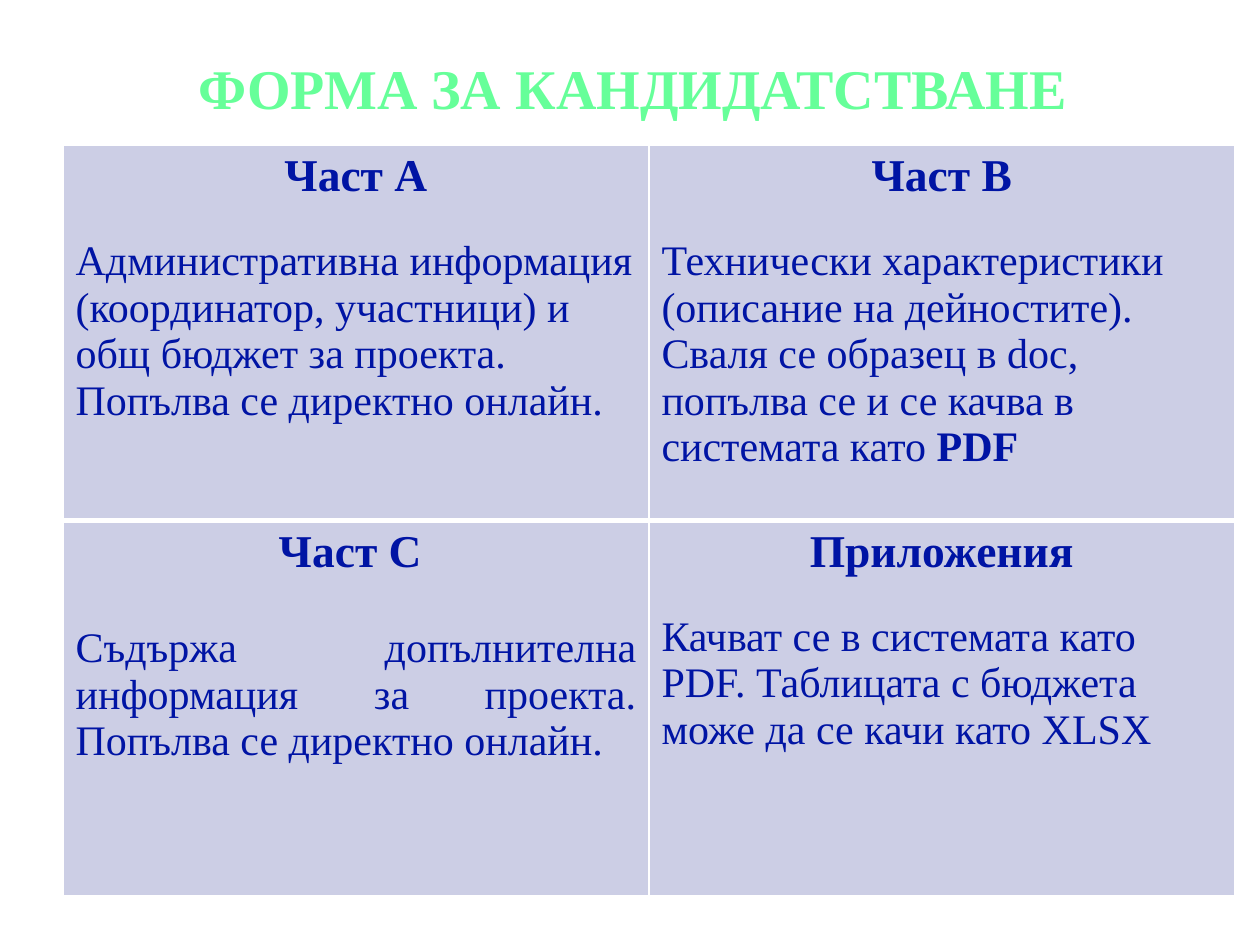
from dataclasses import dataclass

from lxml import etree
from pptx import Presentation
from pptx.dml.color import RGBColor
from pptx.enum.text import MSO_ANCHOR, PP_ALIGN
from pptx.oxml.ns import qn
from pptx.util import Inches, Pt

CENTER, LEFT, JUSTIFY = PP_ALIGN.CENTER, PP_ALIGN.LEFT, PP_ALIGN.JUSTIFY
MIDDLE = MSO_ANCHOR.MIDDLE
TITLE_ONLY = 5


@dataclass(frozen=True)
class Theme:
    font: str = "Times New Roman"
    title_color: str = "66FF99"
    text_color: str = "0014A4"
    cell_color: str = "CCCEE5"
    border_color: str = "FFFFFF"
    title_size: float = 32
    heading_size: float = 26
    body_size: float = 24
    thin: float = 1
    thick: float = 3


@dataclass(frozen=True)
class FormPart:
    heading: str
    body: str
    emphasis: str = ""
    alignment: PP_ALIGN = LEFT
    gap: float = 21


THEME = Theme()
FORM_PARTS = [
    [
        FormPart(
            "Част А",
            "Административна информация (координатор, участници) и общ бюджет "
            "за проекта. Попълва се директно онлайн.",
        ),
        FormPart(
            "Част В",
            "Технически характеристики (описание на дейностите). Сваля се образец "
            "в doc, попълва се и се качва в системата като ",
            emphasis="PDF",
        ),
    ],
    [
        FormPart(
            "Част C ",
            "Съдържа допълнителна информация за проекта. "
            "Попълва се директно онлайн. ",
            alignment=JUSTIFY,
            gap=27.6,
        ),
        FormPart(
            "Приложения",
            "Качват се в системата като PDF. Таблицата с бюджета може да се "
            "качи като XLSX",
        ),
    ],
]


def add_text(paragraph, text: str, *, size: float, color: str, bold: bool = False) -> None:
    run = paragraph.add_run()
    run.text = text
    run.font.name = THEME.font
    run.font.size = Pt(size)
    run.font.bold = bold
    run.font.color.rgb = RGBColor.from_string(color)


def set_borders(cell, top: float, bottom: float) -> None:
    properties = cell._tc.get_or_add_tcPr()
    widths = {"a:lnL": THEME.thin, "a:lnR": THEME.thin, "a:lnT": top, "a:lnB": bottom}
    for index, (tag, width) in enumerate(widths.items()):
        line = etree.Element(qn(tag), w=str(Pt(width)))
        fill = etree.SubElement(line, qn("a:solidFill"))
        etree.SubElement(fill, qn("a:srgbClr"), val=THEME.border_color)
        properties.insert(index, line)


def fill_cell(cell, part: FormPart) -> None:
    cell.fill.solid()
    cell.fill.fore_color.rgb = RGBColor.from_string(THEME.cell_color)
    heading = cell.text_frame.paragraphs[0]
    heading.alignment = CENTER
    add_text(heading, part.heading, size=THEME.heading_size, color=THEME.text_color, bold=True)
    body = cell.text_frame.add_paragraph()
    body.alignment = part.alignment
    body.space_before = Pt(part.gap)
    add_text(body, part.body, size=THEME.body_size, color=THEME.text_color)
    if part.emphasis:
        add_text(body, part.emphasis, size=THEME.body_size, color=THEME.text_color, bold=True)


def add_form_table(slide) -> None:
    table = slide.shapes.add_table(
        len(FORM_PARTS), len(FORM_PARTS[0]),
        Inches(0.5), Inches(1.15), Inches(9.3), Inches(5.96),
    ).table
    table.first_row = False
    table.horz_banding = False
    last_row = len(FORM_PARTS) - 1
    for row, parts in enumerate(FORM_PARTS):
        top = THEME.thick if row > 0 else THEME.thin
        bottom = THEME.thick if row < last_row else THEME.thin
        for column, part in enumerate(parts):
            cell = table.cell(row, column)
            fill_cell(cell, part)
            set_borders(cell, top, bottom)


def format_title(slide, text: str) -> None:
    title = slide.shapes.title
    title.left, title.top = Inches(0.33), Inches(0.3)
    title.width, title.height = Inches(9.5), Inches(0.78)
    title.text_frame.vertical_anchor = MIDDLE
    paragraph = title.text_frame.paragraphs[0]
    paragraph.alignment = CENTER
    add_text(paragraph, text, size=THEME.title_size, color=THEME.title_color, bold=True)


def main() -> None:
    presentation = Presentation()
    presentation.slide_width = Inches(10)
    presentation.slide_height = Inches(7.5)
    slide = presentation.slides.add_slide(presentation.slide_layouts[TITLE_ONLY])
    format_title(slide, "ФОРМА ЗА КАНДИДАТСТВАНЕ ")
    add_form_table(slide)
    presentation.save("out.pptx")


if __name__ == "__main__":
    main()
